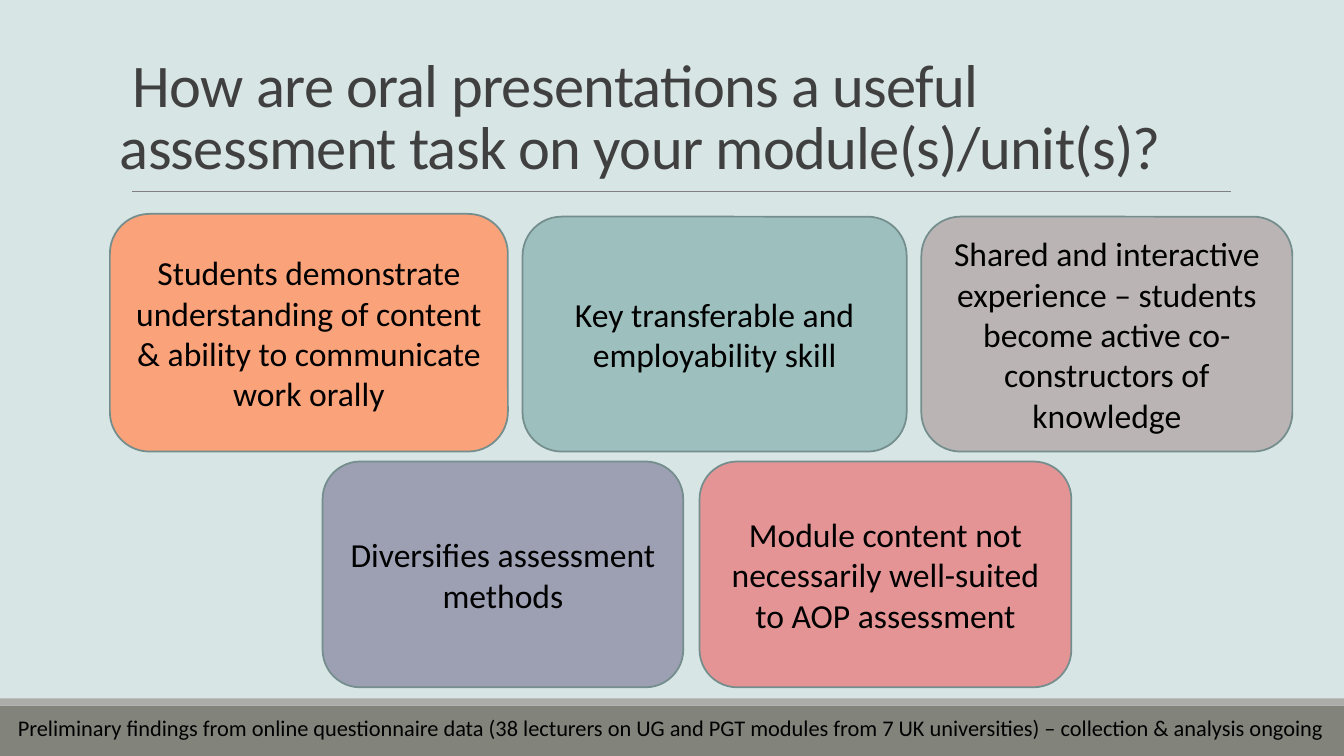
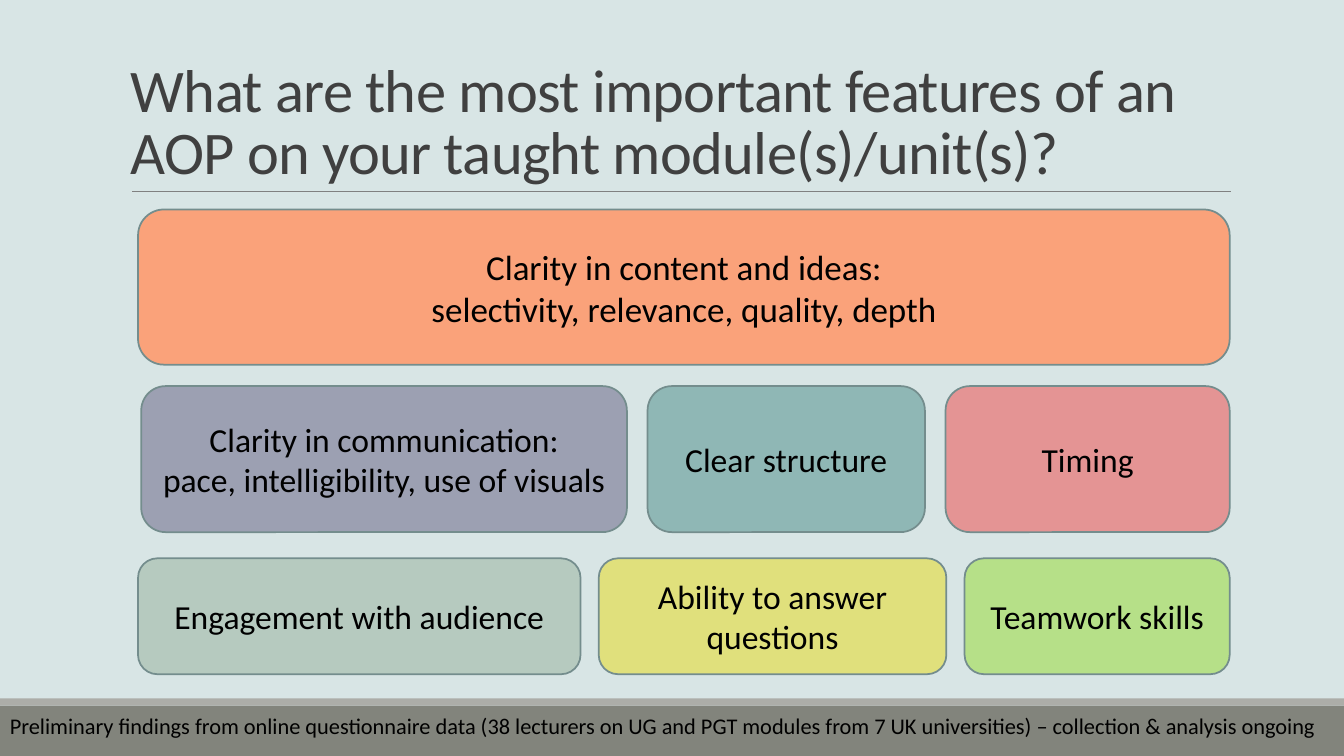
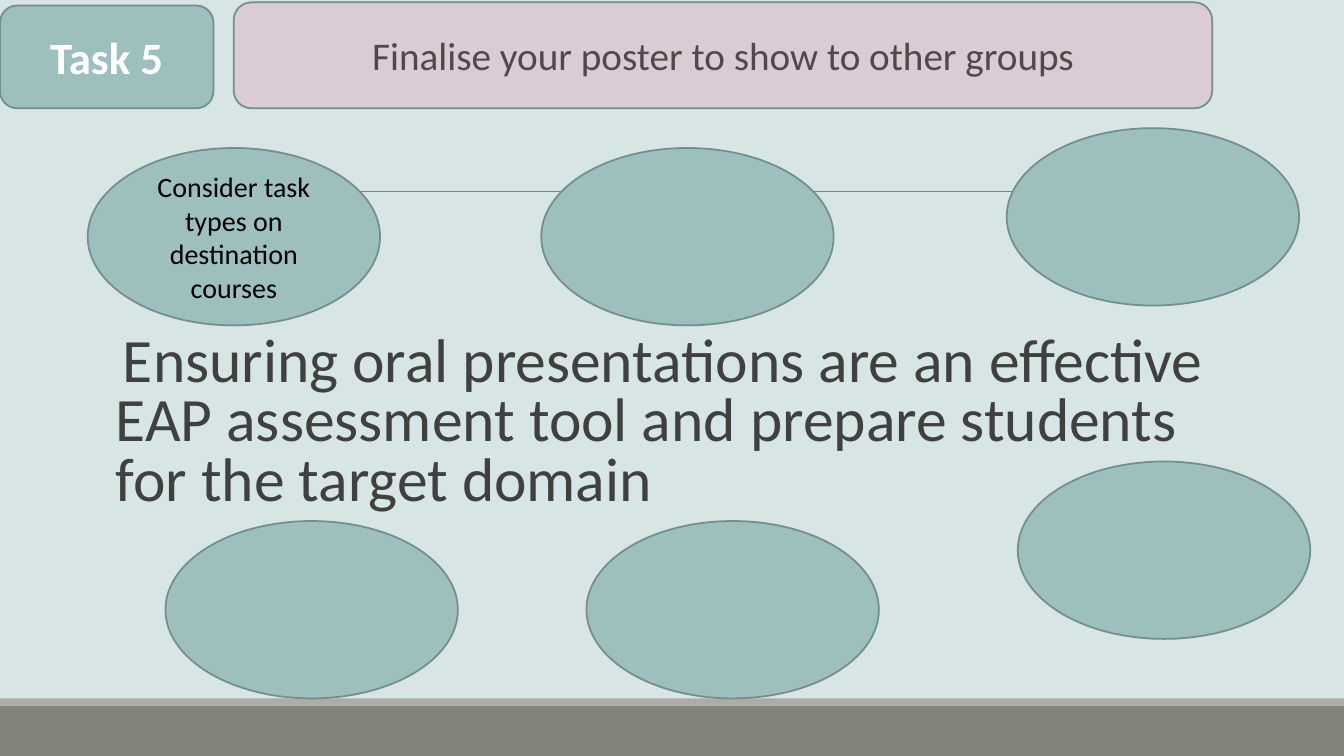
from dataclasses import dataclass

from pptx import Presentation
from pptx.dml.color import RGBColor
from pptx.enum.shapes import MSO_CONNECTOR, MSO_SHAPE
from pptx.enum.text import MSO_ANCHOR, PP_ALIGN
from pptx.oxml.ns import qn
from pptx.util import Cm, Pt


@dataclass(frozen=True)
class Theme:
    font: str = "Calibri"
    background: str = "D8E5E5"
    band: str = "82847C"
    band_edge: str = "ACADA8"
    rule: str = "808080"
    outline: str = "748D8D"
    heading: str = "404040"
    text: str = "000000"
    task_text: str = "514949"
    white: str = "FFFFFF"
    orange: str = "FAA27A"
    teal: str = "9DBFBE"
    deep_teal: str = "8FB7B5"
    grey: str = "BBB4B4"
    violet: str = "9CA0B2"
    red: str = "E49494"
    sage: str = "B6CABF"
    yellow: str = "E0E07C"
    green: str = "B6E088"
    pink: str = "DBCBD5"
    title_size: float = 43.2
    statement_size: float = 44
    task_size: float = 32
    instruction_size: float = 28
    lead_size: float = 25
    box_size: float = 24
    ellipse_size: float = 20
    footer_size: float = 16
    outline_width: float = 1.25
    rule_width: float = 0.5


THEME = Theme()


@dataclass(frozen=True)
class Box:
    text: str
    fill: str
    width: float
    height: float
    size: float = THEME.box_size
    color: str = THEME.text
    bold: bool = False


@dataclass(frozen=True)
class Row:
    """Boxes side by side that share a bottom edge; lengths in cm."""
    left: float
    bottom: float
    gap: float
    boxes: tuple


# All positions and lengths below are in centimetres.
SLIDE_WIDTH, SLIDE_HEIGHT = 33.87, 19.05
BAND_TOP, BAND_EDGE_TOP = 17.78, 17.6
RULE_LEFT, RULE_RIGHT, RULE_TOP = 3.33, 31.01, 4.83
TITLE_WIDTH, TITLE_HEIGHT = 27.94, 4.04
FOOTER_WIDTH, FOOTER_HEIGHT = 34.2, 0.94
ELLIPSE_WIDTH, ELLIPSE_HEIGHT = 7.37, 4.47

FOOTER = ("Preliminary findings from online questionnaire data (38 lecturers on UG and PGT "
          "modules from 7 UK universities) – collection & analysis ongoing")

FINDINGS = [
    {
        "title": "How are oral presentations a useful assessment task on your module(s)/unit(s)?",
        "title_at": (2.77, 0.66),
        "indent": 0.33,
        "footer_at": (0.2, 17.86),
        "rows": [
            Row(2.77, 11.38, 0.37, (
                Box("Students demonstrate understanding of content & ability to communicate "
                    "work orally", THEME.orange, 10.03, 5.99),
                Box("Key transferable and employability skill", THEME.teal, 9.68, 5.92),
                Box("Shared and interactive experience – students become active "
                    "co-constructors of knowledge", THEME.grey, 9.35, 5.92),
            )),
            Row(8.13, 17.32, 0.41, (
                Box("Diversifies assessment methods", THEME.violet, 9.09, 5.69),
                Box("Module content not necessarily well-suited to AOP assessment",
                    THEME.red, 9.37, 5.69),
            )),
        ],
    },
    {
        "title": "What are the most important features of an AOP on your taught "
                 "module(s)/unit(s)?",
        "title_at": (3.05, 0.79),
        "indent": 0,
        "footer_at": (0, 17.81),
        "rows": [
            Row(3.48, 9.19, 0, (
                Box("Clarity in content and ideas:\nselectivity, relevance, quality, depth",
                    THEME.orange, 27.51, 3.91, THEME.lead_size),
            )),
            Row(3.56, 13.41, 0.52, (
                Box("Clarity in communication:\npace, intelligibility, use of visuals",
                    THEME.violet, 12.24, 3.68),
                Box("Clear structure", THEME.deep_teal, 6.99, 3.68),
                Box("Timing", THEME.red, 7.16, 3.68),
            )),
            Row(3.48, 16.99, 0.46, (
                Box("Engagement with audience", THEME.sage, 11.15, 2.92),
                Box("Ability to answer questions", THEME.yellow, 8.76, 2.92),
                Box("Teamwork skills", THEME.green, 6.68, 2.92),
            )),
        ],
    },
]

TASK_ROW = Row(0, 2.73, 0.51, (
    Box("Task 5", THEME.teal, 5.38, 2.59, THEME.task_size, THEME.white, True),
    Box("Finalise your poster to show to other groups", THEME.pink, 24.66, 2.67,
        THEME.instruction_size, THEME.task_text),
))
STATEMENT = ("Ensuring oral presentations are an effective EAP assessment tool and prepare "
             "students for the target domain")
STATEMENT_AT = (2.92, 8.33, 28.14, 4.8)
ELLIPSES = [
    ("Consider task types on destination courses", 2.21, 3.73),
    ("", 13.64, 3.73),
    ("", 25.37, 3.23),
    ("", 25.65, 11.63),
    ("", 14.78, 13.13),
    ("", 4.17, 13.13),
]


def rgb(color):
    return RGBColor.from_string(color)


def write(shape, text, size, color, bold=False, align=PP_ALIGN.LEFT):
    frame = shape.text_frame
    frame.word_wrap = True
    frame.text = text
    for paragraph in frame.paragraphs:
        paragraph.alignment = align
        for run in paragraph.runs:
            run.font.name = THEME.font
            run.font.size = Pt(size)
            run.font.bold = bold
            run.font.color.rgb = rgb(color)
    return frame


def add_filled(slide, kind, left, top, width, height, fill, outline=None):
    shape = slide.shapes.add_shape(kind, Cm(left), Cm(top), Cm(width), Cm(height))
    shape.shadow.inherit = False
    shape.fill.solid()
    shape.fill.fore_color.rgb = rgb(fill)
    if outline:
        shape.line.color.rgb = rgb(outline)
        shape.line.width = Pt(THEME.outline_width)
    else:
        shape.line.fill.background()
    return shape


def add_text(slide, left, top, width, height, text, size, color):
    textbox = slide.shapes.add_textbox(Cm(left), Cm(top), Cm(width), Cm(height))
    return write(textbox, text, size, color)


def add_label(shape, text, size, color=THEME.text, bold=False):
    frame = write(shape, text, size, color, bold, PP_ALIGN.CENTER)
    frame.vertical_anchor = MSO_ANCHOR.MIDDLE


def set_first_line(paragraph, indent, line_spacing):
    paragraph.line_spacing = line_spacing
    paragraph._p.get_or_add_pPr().set("indent", str(Cm(indent)))


def add_base_slide(presentation):
    """Add a blank slide with the bottom bands and the rule under the title."""
    slide = presentation.slides.add_slide(presentation.slide_layouts[6])
    for top, bottom, fill in ((BAND_TOP, SLIDE_HEIGHT, THEME.band),
                              (BAND_EDGE_TOP, BAND_TOP, THEME.band_edge)):
        add_filled(slide, MSO_SHAPE.RECTANGLE, 0, top, SLIDE_WIDTH, bottom - top, fill)
    rule = slide.shapes.add_connector(MSO_CONNECTOR.STRAIGHT, Cm(RULE_LEFT), Cm(RULE_TOP),
                                      Cm(RULE_RIGHT), Cm(RULE_TOP))
    rule.line.color.rgb = rgb(THEME.rule)
    rule.line.width = Pt(THEME.rule_width)
    properties = rule._element.spPr
    properties.append(properties.makeelement(qn("a:effectLst"), {}))
    return slide


def add_title(slide, text, position, indent):
    frame = add_text(slide, *position, TITLE_WIDTH, TITLE_HEIGHT, text,
                     THEME.title_size, THEME.heading)
    frame.vertical_anchor = MSO_ANCHOR.BOTTOM
    paragraph = frame.paragraphs[0]
    set_first_line(paragraph, indent, 0.85)
    paragraph.runs[0]._r.get_or_add_rPr().set("spc", "-50")


def add_row(slide, row):
    left = row.left
    for box in row.boxes:
        shape = add_filled(slide, MSO_SHAPE.ROUNDED_RECTANGLE, left, row.bottom - box.height,
                           box.width, box.height, box.fill, THEME.outline)
        add_label(shape, box.text, box.size, box.color, box.bold)
        left += box.width + row.gap


def add_findings_slide(presentation, content):
    slide = add_base_slide(presentation)
    add_title(slide, content["title"], content["title_at"], content["indent"])
    add_text(slide, *content["footer_at"], FOOTER_WIDTH, FOOTER_HEIGHT, FOOTER,
             THEME.footer_size, THEME.text)
    for row in content["rows"]:
        add_row(slide, row)


def add_task_slide(presentation):
    slide = add_base_slide(presentation)
    statement = add_text(slide, *STATEMENT_AT, STATEMENT, THEME.statement_size, THEME.heading)
    statement.margin_left = statement.margin_right = 0
    set_first_line(statement.paragraphs[0], 0.18, 0.8)
    add_row(slide, TASK_ROW)
    for text, left, top in ELLIPSES:
        ellipse = add_filled(slide, MSO_SHAPE.OVAL, left, top, ELLIPSE_WIDTH, ELLIPSE_HEIGHT,
                             THEME.teal, THEME.outline)
        if text:
            add_label(ellipse, text, THEME.ellipse_size)


def main():
    presentation = Presentation()
    presentation.slide_width = Cm(SLIDE_WIDTH)
    presentation.slide_height = Cm(SLIDE_HEIGHT)
    background = presentation.slide_master.background.fill
    background.solid()
    background.fore_color.rgb = rgb(THEME.background)
    for content in FINDINGS:
        add_findings_slide(presentation, content)
    add_task_slide(presentation)
    presentation.save("out.pptx")


if __name__ == "__main__":
    main()
